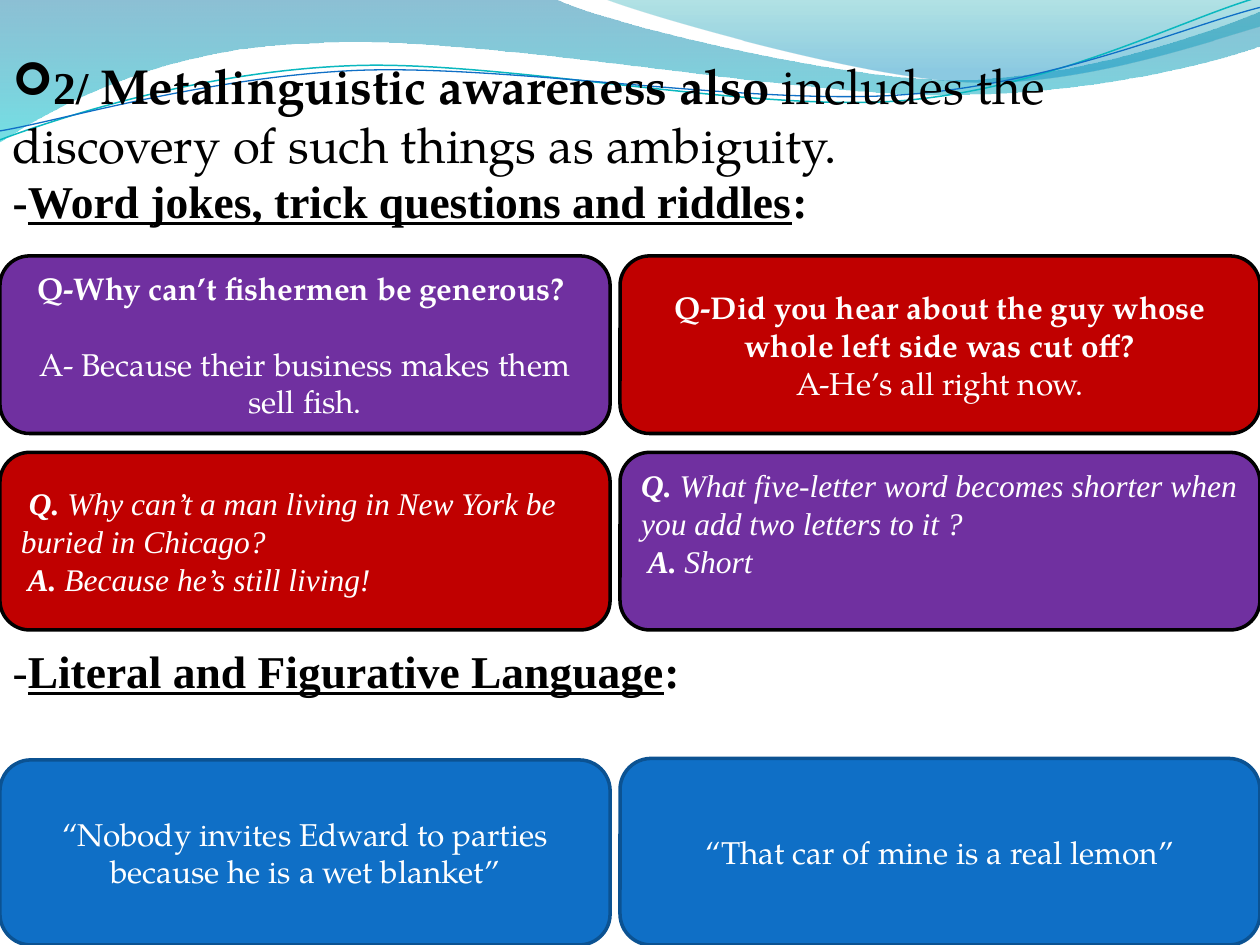
from lxml import etree
from pptx import Presentation
from pptx.dml.color import RGBColor
from pptx.enum.shapes import MSO_SHAPE
from pptx.enum.text import MSO_ANCHOR, MSO_AUTO_SIZE, PP_ALIGN
from pptx.oxml.ns import qn
from pptx.util import Cm, Pt

ROUNDED = MSO_SHAPE.ROUNDED_RECTANGLE
LEFT, CENTER = PP_ALIGN.LEFT, PP_ALIGN.CENTER
TOP, MIDDLE = MSO_ANCHOR.TOP, MSO_ANCHOR.MIDDLE
NO_AUTOFIT = MSO_AUTO_SIZE.NONE
SERIF, TIMES = "TeX Gyre Pagella", "Times New Roman"
PURPLE, RED, BLUE = "7030A0", "C00000", "0F6FC6"
BLACK, WHITE, DARK_BLUE = "000000", "FFFFFF", "0B5292"
SLIDE_WIDTH, SLIDE_HEIGHT = Cm(25.4), Cm(19.05)
COLUMNS = ((0, 12.3), (12.5, 12.9))  # left and width in cm
LINE_ROTATION = 357.3

# Each wave is a start point and segments in cm: one point is a line, three a Bézier curve.
FILLED_WAVES = (
    ((0, 0), (((11.18, -0.03),),
              ((12.09, 0.43), (16.87, 1.6), (19.25, 1.6)),
              ((21.67, 1.6), (24.33, 0.66), (25.4, 0.23)),
              ((25.43, 0.91),),
              ((24.97, 1.12), (22.1, 1.93), (18.95, 1.91)),
              ((15.8, 1.91), (9.7, 0.71), (6.53, 0.86)),
              ((3.28, 0.91), (1.17, 2.11), (-0.03, 2.87))),
     ((0, "0074A1", 45), (1, "00C6CF", 55))),
    ((12.17, -0.03), (((12.93, 0.28), (17.32, 1.57), (19.53, 1.65)),
                      ((21.74, 1.75), (24.41, 0.81), (25.4, 0.53)),
                      ((25.4, 0),)),
     ((0, "00A1A9", 30), (0.8, "008BBF", 45))),
)
LINE_WAVES = (
    ((-0.05, 2.22), (((1.19, 1.82), (4.02, 1.04), (7.05, 1.06)),
                     ((10.05, 1.07), (15.02, 2.37), (18.08, 2.29)),
                     ((21.13, 2.2), (23.87, 0.91), (25.41, 0.55))),
     "0AB8BF", 0.85),
    ((-0.04, 2.04), (((1.16, 1.9), (4.18, 1.15), (7.2, 1.16)),
                     ((10.25, 1.18), (15.13, 2.25), (18.18, 2.17)),
                     ((21.21, 2.1), (23.93, 1.06), (25.45, 0.75))),
     BLUE, 0.75),
)


def color(value):
    return RGBColor.from_string(value)


def add_wave(slide, start, segments, close):
    """Draw straight lines through all points, then bend each group of three."""
    builder = slide.shapes.build_freeform(Cm(start[0]), Cm(start[1]))
    builder.add_line_segments(
        [(Cm(x), Cm(y)) for segment in segments for x, y in segment], close=close)
    wave = builder.convert_to_shape()
    wave.shadow.inherit = False
    lines = iter(list(wave._element.spPr.iter(qn("a:lnTo"))))
    for segment in segments:
        group = [next(lines) for _ in segment]
        if len(group) == 3:
            curve = etree.Element(qn("a:cubicBezTo"))
            group[0].addprevious(curve)
            for line in group:
                curve.append(line[0])
                line.getparent().remove(line)
    return wave


def add_filled_wave(slide, start, segments, stops):
    wave = add_wave(slide, start, segments, True)
    wave.line.fill.background()
    wave.fill.gradient()
    wave.fill.gradient_angle = 270
    elements = wave._element.spPr.iter(qn("a:gs"))
    for stop, element, (position, value, opacity) in zip(
            wave.fill.gradient_stops, elements, stops):
        stop.position = position
        stop.color.rgb = color(value)
        etree.SubElement(element[0], qn("a:alpha"), val=str(opacity * 1000))


def add_line_wave(slide, start, segments, value, width):
    wave = add_wave(slide, start, segments, False)
    wave.rotation = LINE_ROTATION
    wave.fill.background()
    wave.line.color.rgb = color(value)
    wave.line.width = Pt(width)


def write_paragraph(paragraph, runs, font, size, value, alignment=LEFT):
    """Fill a paragraph with runs, each a text and its font settings."""
    paragraph.alignment = alignment
    paragraph.font.name = font
    paragraph.font.size = Pt(size)
    paragraph.font.color.rgb = color(value)
    for text, settings in runs:
        run = paragraph.add_run()
        run.text = text
        for name, setting in settings.items():
            setattr(run.font, name, setting)


def add_card(slide, column, top, height, fill, line, paragraphs,
             font=SERIF, alignment=CENTER, anchor=MIDDLE):
    left, width = COLUMNS[column]
    card = slide.shapes.add_shape(ROUNDED, Cm(left), Cm(top), Cm(width), Cm(height))
    card.shadow.inherit = False
    card.fill.solid()
    card.fill.fore_color.rgb = color(fill)
    card.line.color.rgb = color(line)
    card.line.width = Pt(2)
    frame = card.text_frame
    frame.word_wrap = True
    frame.vertical_anchor = anchor
    for index, runs in enumerate(paragraphs):
        paragraph = frame.add_paragraph() if index else frame.paragraphs[0]
        write_paragraph(paragraph, runs, font, 18, WHITE, alignment)
    return card


def write_subheading(paragraph, text, dash_bold):
    runs = (("-", {"bold": dash_bold}),
            (text, {"bold": True, "underline": True}),
            (":", {"bold": True}))
    write_paragraph(paragraph, runs, TIMES, 26, BLACK)


def set_bullet(paragraph, character=None):
    """Remove the indent and set the bullet, or no bullet."""
    properties = paragraph._p.get_or_add_pPr()
    properties.set("marL", "0")
    properties.set("indent", "0")
    bullets = [etree.Element(qn("a:buNone"))]
    if character:
        bullets = [etree.Element(qn("a:buFont"), typeface="Wingdings"),
                   etree.Element(qn("a:buChar"), char=character)]
    for bullet in bullets:
        properties.insert_element_before(bullet, "a:tabLst", "a:defRPr", "a:extLst")


def place_placeholder(slide, placeholder, top, height):
    """Put a placeholder across the slide, in front of what is drawn so far."""
    placeholder.left, placeholder.top = Cm(0), top
    placeholder.width, placeholder.height = SLIDE_WIDTH, height
    slide.shapes._spTree.append(placeholder._element)
    frame = placeholder.text_frame
    frame.word_wrap = True
    frame.auto_size = NO_AUTOFIT
    frame.vertical_anchor = TOP
    return frame


def write_body(slide):
    frame = place_placeholder(slide, slide.placeholders[1], Cm(0), SLIDE_HEIGHT)
    frame.margin_top = Cm(12.96)
    paragraph = frame.paragraphs[0]
    write_subheading(paragraph, "Literal and Figurative Language", False)
    paragraph.space_before = Pt(0)
    set_bullet(paragraph)


def write_title(slide):
    frame = place_placeholder(slide, slide.shapes.title, Cm(0.99), Cm(3.76))
    heading = frame.paragraphs[0]
    write_paragraph(heading, (
        ("2/ ", {"bold": True, "name": TIMES, "size": Pt(26)}),
        ("Metalinguistic awareness also", {"bold": True}),
        (" includes the discovery of such things as ambiguity.", {}),
    ), SERIF, 28, BLACK)
    set_bullet(heading, "➢")
    write_subheading(frame.add_paragraph(), "Word jokes, trick questions and riddles", True)


def add_jokes(slide):
    bold, italic = {"bold": True}, {"italic": True}
    label = {**bold, **italic}
    first_row, second_row, height = 5.16, 9.12, 3.58
    fishermen = add_card(slide, 0, first_row, height, PURPLE, BLACK, (
        (("Q-Why can’t fishermen be generous? ", bold),),
        (("A- Because their business makes them sell fish.", {}),)))
    fishermen.text_frame.paragraphs[0].space_after = Pt(21.5)
    add_card(slide, 1, first_row, height, RED, BLACK, (
        (("Q-Did you hear about the guy whose whole left side was cut off?", bold),),
        (("A-He’s all right now.", {}),)))
    add_card(slide, 0, second_row, height, RED, BLACK, (
        ((" Q.", label),
         (" Why can’t a man living in New York be buried in Chicago?", italic)),
        ((" A.", label), (" Because he’s still living!", italic))), TIMES, LEFT)
    five_letters = add_card(slide, 1, second_row, height, PURPLE, BLACK, (
        (("Q.", label),
         (" What five-letter word becomes shorter when you add two letters to it ?", italic)),
        ((" A.", label), (" Short", italic))), TIMES, LEFT, TOP)
    five_letters.text_frame.margin_top = Cm(0.1)


def add_sayings(slide):
    sayings = (("“Nobody invites Edward to parties because he is a wet blanket”", 15.32, 3.73),
               ("“That car of mine is a real lemon”", 15.29, 3.76))
    for column, (text, top, height) in enumerate(sayings):
        add_card(slide, column, top, height, BLUE, DARK_BLUE, (((text, {}),),))


def main():
    presentation = Presentation()
    presentation.slide_width, presentation.slide_height = SLIDE_WIDTH, SLIDE_HEIGHT
    slide = presentation.slides.add_slide(presentation.slide_layouts[1])
    for wave in FILLED_WAVES:
        add_filled_wave(slide, *wave)
    for wave in LINE_WAVES:
        add_line_wave(slide, *wave)
    write_body(slide)
    add_jokes(slide)
    add_sayings(slide)
    write_title(slide)
    presentation.save("out.pptx")


if __name__ == "__main__":
    main()
